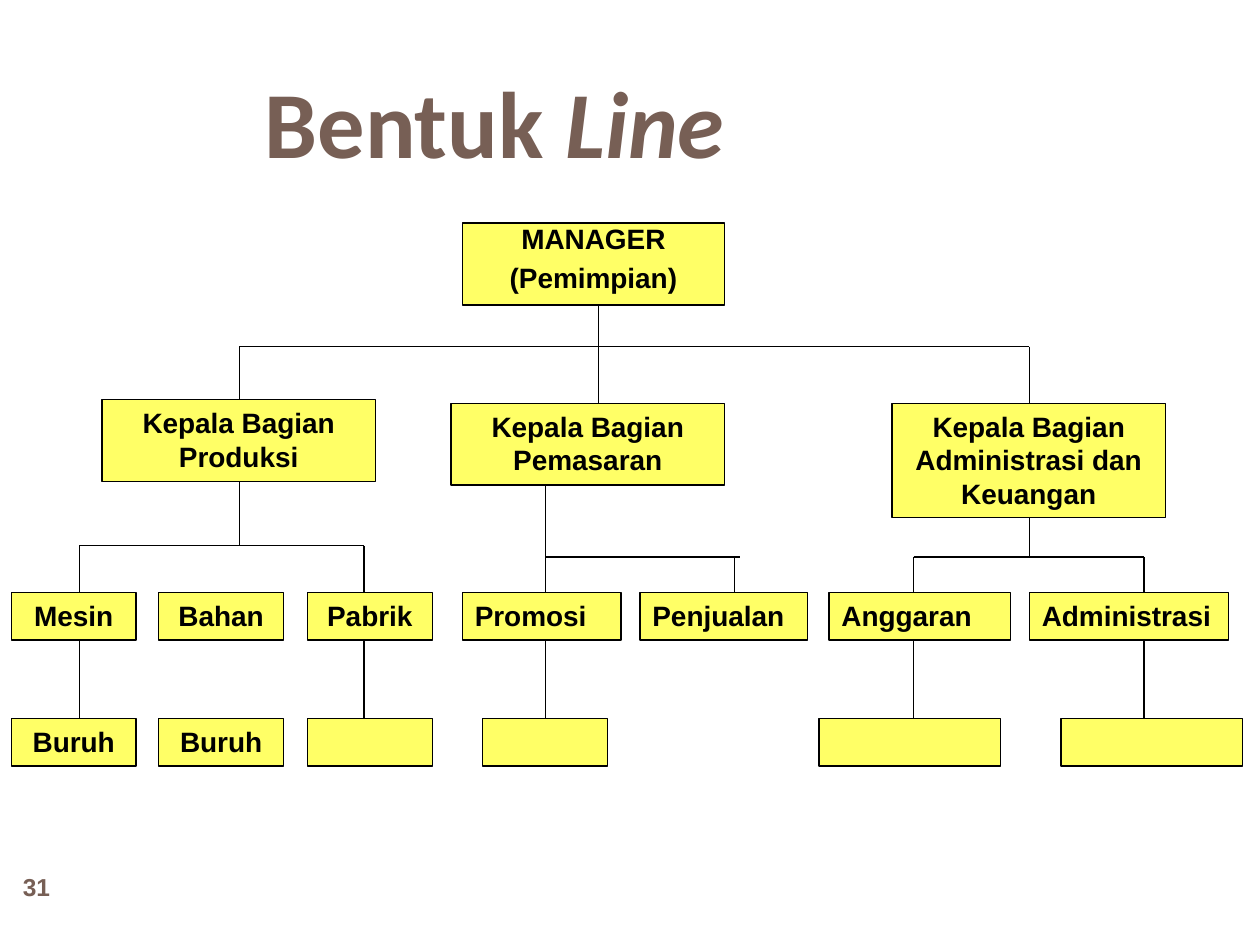
from lxml import etree
from pptx import Presentation
from pptx.dml.color import RGBColor
from pptx.enum.shapes import MSO_CONNECTOR as Connector, MSO_SHAPE as Shape
from pptx.enum.text import MSO_ANCHOR as Anchor, MSO_AUTO_SIZE as AutoSize, PP_ALIGN as Align
from pptx.oxml.ns import qn
from pptx.util import Inches, Pt

BROWN, YELLOW, BLACK = "775F55", "FFFF66", "000000"
ROW_HEIGHT, SECTION_TOP, BRANCH_TOP = 0.38, 4.7, 4.42
WORKER_TOP, LINE_BOTTOM, HEAD_WIDTH = 5.7, 5.83, 2.17
SMALL_WIDTH, WIDE_WIDTH = 0.99, 1.44
PRODUCTION_COLUMNS = (0.09, 1.26, 2.44)

BODY = {"name": "Arial", "size": Pt(16), "bold": True}
TITLE = {"name": "Calibri", "size": Pt(54), "bold": True}
NUMBER = {"name": "Arial", "size": Pt(14), "bold": True}

HEADS = [
    ("Kepala Bagian Produksi", 0.81, 3.17, 0.65),
    ("Kepala Bagian Pemasaran", 3.58, 3.2, 0.65),
    ("Kepala Bagian Administrasi dan Keuangan", 7.08, 3.2, 0.91),
]
SECTIONS = [
    ("Promosi", 3.67, 1.26),
    ("Penjualan", 5.08, 1.33),
    ("Anggaran", 6.58, WIDE_WIDTH),
    ("Administrasi", 8.17, 1.58),
]
EMPTY_BOXES = [(3.83, SMALL_WIDTH), (6.5, WIDE_WIDTH), (8.42, WIDE_WIDTH)]
VERTICALS = [
    (4.75, 1.92, 3.33),
    (1.9, 2.75, 4.33),
    (8.17, 2.75, BRANCH_TOP),
    (0.63, 4.33, LINE_BOTTOM),
    (2.89, 4.33, LINE_BOTTOM),
    (4.33, 3.75, LINE_BOTTOM),
    (5.83, BRANCH_TOP, 4.83),
    (7.25, BRANCH_TOP, LINE_BOTTOM),
    (9.08, BRANCH_TOP, LINE_BOTTOM),
]
HORIZONTALS = [
    (2.75, 1.9, 8.17),
    (4.33, 0.63, 2.89),
    (BRANCH_TOP, 4.33, 5.87),
    (BRANCH_TOP, 7.25, 9.08),
]


def color(value):
    """Return the colour for a hex string."""
    return RGBColor.from_string(value)


def apply_format(target, values):
    """Set each attribute in a dict of format values."""
    for name, value in values.items():
        setattr(target, name, value)


def add_run(paragraph, text, values, text_color):
    """Append a formatted run to a paragraph."""
    run = paragraph.add_run()
    run.text = text
    apply_format(run.font, values)
    run.font.color.rgb = color(text_color)
    return run


def add_title(slide):
    """Place the title and fill it with its two runs."""
    title = slide.shapes.title
    apply_format(title, {"left": Inches(2), "top": Inches(0.33),
                         "width": Inches(8), "height": Inches(1.25)})
    apply_format(title.text_frame, {"auto_size": AutoSize.NONE, "word_wrap": True,
                                    "vertical_anchor": Anchor.MIDDLE})
    paragraph = title.text_frame.paragraphs[0]
    paragraph.alignment = Align.LEFT
    add_run(paragraph, "Bentuk ", TITLE, BROWN)
    add_run(paragraph, "Line", TITLE | {"italic": True}, BROWN)


def add_page_number(slide, text):
    """Add the page number at the lower left."""
    box = slide.shapes.add_textbox(Inches(0), Inches(6.83), Inches(0.58), Inches(0.42))
    apply_format(box.text_frame, {"word_wrap": True, "vertical_anchor": Anchor.MIDDLE})
    paragraph = box.text_frame.paragraphs[0]
    paragraph.alignment = Align.CENTER
    add_run(paragraph, text, NUMBER, BROWN)


def add_line(slide, start_x, start_y, end_x, end_y):
    """Add a thin black line without a shadow."""
    line = slide.shapes.add_connector(
        Connector.STRAIGHT, Inches(start_x), Inches(start_y), Inches(end_x), Inches(end_y))
    line.line.color.rgb = color(BLACK)
    line.line.width = Pt(0.75)
    etree.SubElement(line._element.spPr, qn("a:effectLst"))


def add_box(slide, texts, left, top, width, height=ROW_HEIGHT,
            alignment=Align.CENTER, line_spacing=None):
    """Add a yellow box with one paragraph for each text."""
    box = slide.shapes.add_shape(
        Shape.RECTANGLE, Inches(left), Inches(top), Inches(width), Inches(height))
    box.shadow.inherit = False
    box.fill.solid()
    box.fill.fore_color.rgb = color(YELLOW)
    box.line.color.rgb = color(BLACK)
    box.line.width = Pt(0.75)
    if not texts:
        return
    frame = box.text_frame
    apply_format(frame, {"word_wrap": True, "vertical_anchor": Anchor.TOP,
                         "auto_size": AutoSize.SHAPE_TO_FIT_TEXT})
    for index, text in enumerate(texts):
        paragraph = frame.add_paragraph() if index else frame.paragraphs[0]
        apply_format(paragraph, {"alignment": alignment, "space_before": Pt(8),
                                 "line_spacing": line_spacing})
        add_run(paragraph, text, BODY, BLACK)


def add_lines(slide):
    """Add every line of the chart behind the boxes."""
    for x, top, bottom in VERTICALS:
        add_line(slide, x, top, x, bottom)
    for y, left, right in HORIZONTALS:
        add_line(slide, left, y, right, y)


def add_boxes(slide):
    """Add the boxes of the chart level by level."""
    add_box(slide, ["MANAGER", "(Pemimpian)"], 3.67, 1.77, 2.08, 0.65, line_spacing=0.75)
    for text, left, top, height in HEADS:
        add_box(slide, [text], left, top, HEAD_WIDTH, height)
    for left, section, workers in zip(PRODUCTION_COLUMNS, ("Mesin", "Bahan", "Pabrik"),
                                      (["Buruh"], ["Buruh"], [])):
        add_box(slide, [section], left, SECTION_TOP, SMALL_WIDTH)
        add_box(slide, workers, left, WORKER_TOP, SMALL_WIDTH)
    for text, left, width in SECTIONS:
        add_box(slide, [text], left, SECTION_TOP, width, alignment=Align.LEFT)
    for left, width in EMPTY_BOXES:
        add_box(slide, [], left, WORKER_TOP, width)


def main():
    """Build the organisation chart slide and save it."""
    presentation = Presentation()
    apply_format(presentation, {"slide_width": Inches(10), "slide_height": Inches(7.5)})
    slide = presentation.slides.add_slide(presentation.slide_layouts[5])
    add_title(slide)
    add_page_number(slide, "31")
    add_lines(slide)
    add_boxes(slide)
    presentation.save("out.pptx")


if __name__ == "__main__":
    main()
